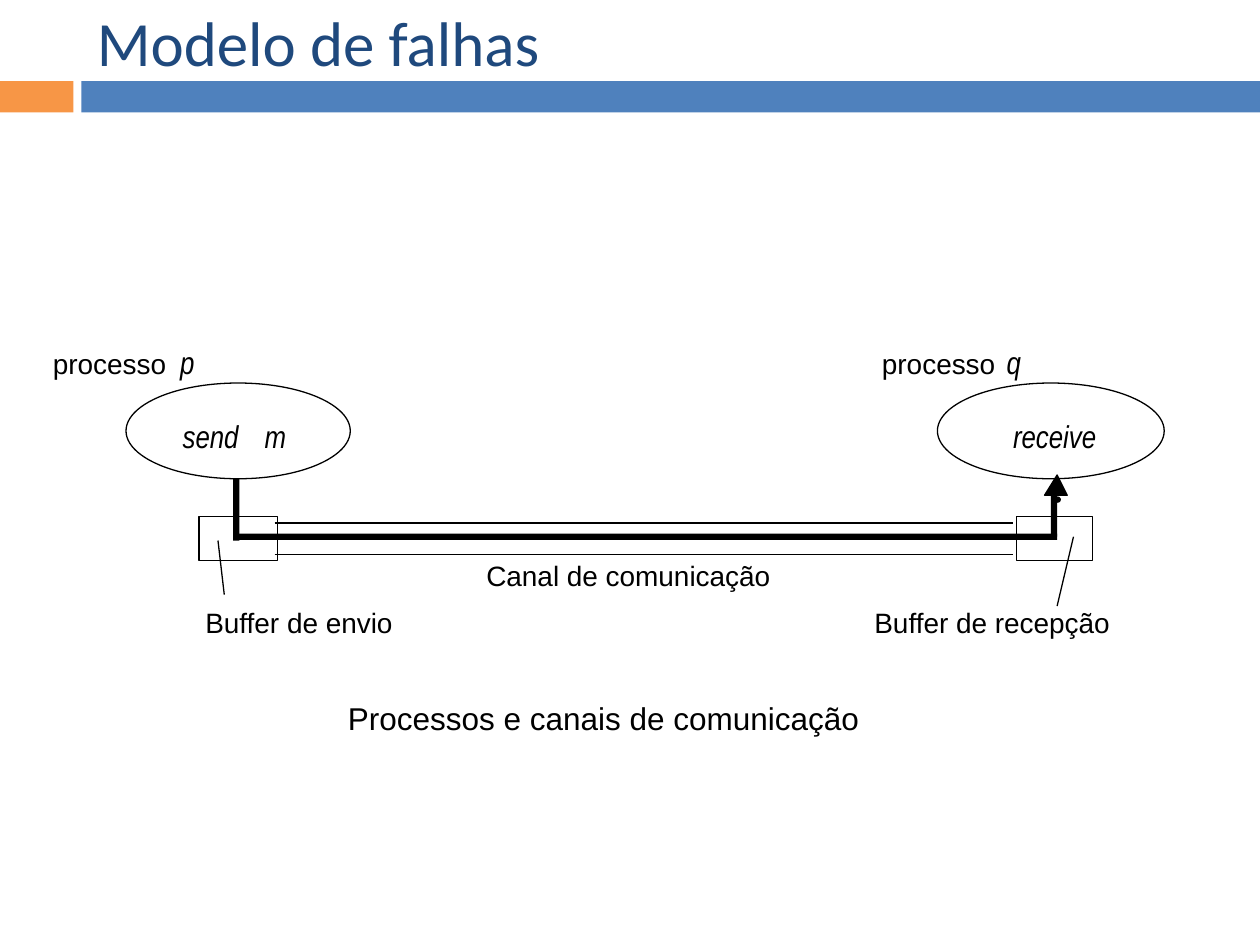
from lxml import etree
from pptx import Presentation
from pptx.dml.color import RGBColor
from pptx.enum.shapes import MSO_CONNECTOR, MSO_SHAPE
from pptx.enum.text import MSO_ANCHOR, MSO_AUTO_SIZE, PP_ALIGN
from pptx.oxml.ns import qn
from pptx.util import Pt

RECT, OVAL = MSO_SHAPE.RECTANGLE, MSO_SHAPE.OVAL
STRAIGHT = MSO_CONNECTOR.STRAIGHT
MIDDLE, CENTER, LEFT = MSO_ANCHOR.MIDDLE, PP_ALIGN.CENTER, PP_ALIGN.LEFT
GROW = MSO_AUTO_SIZE.SHAPE_TO_FIT_TEXT

BLACK, BLUE, ORANGE, NAVY = "000000", "4F81BD", "F79646", "1F497D"
THIN = 0.75

# Lengths are in points: left, top, width, height
TITLE = ("Modelo de falhas", (48.24, 4.32, 642.24, 38.16))
CAPTION = ("Processos e canais de comunicação", (113.76, 396, 462.24, 28.8))
BANDS = [((0, 46.3, 42, 18), ORANGE), ((46.5, 46.3, 673.5, 18), BLUE)]

# text, left, top, width
LABELS = [
    ("processo", 30.24, 198, 69.12),
    ("processo", 504, 198, 69.12),
    ("Canal de comunicação", 277.92, 318.96, 162.72),
    ("Buffer de envio", 117.36, 346.32, 107.28),
    ("Buffer de recepção", 499.68, 346.32, 134.64),
]
SYMBOLS = [
    ("p", 102.96, 195.84, 11.52),
    ("q", 575.28, 195.84, 11.52),
    ("send", 104.4, 238.32, 43.2),
    ("m", 151.2, 238.32, 17.28),
    ("receive", 578.88, 238.32, 66.24),
]

OUTLINES = [
    (RECT, (113.76, 295.2, 44.64, 25.2)),
    (RECT, (581.04, 295.2, 43.2, 25.2)),
    (OVAL, (72, 218.88, 128.16, 54.72)),
    (OVAL, (535.68, 218.88, 129.6, 54.72)),
]
CHANNEL_WALLS = [(156.96, y, 578.88, y) for y in (298.8, 316.8)]
BUFFER_POINTERS = [(128.16, 339.84, 124.56, 308.88),
                   (604.08, 346.32, 613.44, 306.72)]

MESSAGE_PATH = [
    (RECT, (133.2, 273.6, 3.6, 35.28)),
    (RECT, (135.36, 304.92, 468.72, 3.6)),
    (RECT, (600.48, 281.52, 3.6, 25.2)),
    (OVAL, (602.64, 283.68, 3.6, 3.6)),
]
ARROWHEAD = [(596.88, 283), (604.08, 271.44), (609.84, 283)]


def color(value):
    return RGBColor.from_string(value)


def style(shape, fill=None, line=None):
    shape.shadow.inherit = False
    if fill:
        shape.fill.solid()
        shape.fill.fore_color.rgb = color(fill)
    else:
        shape.fill.background()
    if line:
        shape.line.color.rgb = color(line)
        shape.line.width = Pt(THIN)
    else:
        shape.line.fill.background()


def add_figure(page, kind, area, fill=None, line=None):
    style(page.shapes.add_shape(kind, *map(Pt, area)), fill, line)


def add_line(page, ends):
    line = page.shapes.add_connector(STRAIGHT, *map(Pt, ends))
    line.line.color.rgb = color(BLACK)
    line.line.width = Pt(THIN)
    properties = line._element.find(qn("p:spPr"))
    etree.SubElement(properties, qn("a:effectLst"))


def add_text(page, text, area, size, font, ink=BLACK, align=LEFT):
    box = page.shapes.add_textbox(*map(Pt, area))
    frame = box.text_frame
    frame.word_wrap = True
    frame.text = text
    para = frame.paragraphs[0]
    para.alignment = align
    span = para.runs[0]
    span.font.size = Pt(size)
    span.font.name = font
    span.font.color.rgb = color(ink)
    return frame


def add_label(page, text, area, size, font, italic=False):
    """Add a one-line text without margins that keeps to its own width."""
    frame = add_text(page, text, area, size, font)
    frame.word_wrap = False
    frame.auto_size = GROW
    frame.margin_left = frame.margin_right = 0
    frame.margin_top = frame.margin_bottom = 0
    frame.paragraphs[0].runs[0].font.italic = italic


def main():
    deck = Presentation()
    deck.slide_width, deck.slide_height = Pt(720), Pt(540)
    page = deck.slides.add_slide(deck.slide_layouts[6])

    for area, fill in BANDS:
        add_figure(page, RECT, area, fill=fill)
    title = add_text(page, *TITLE, 36, "Calibri", NAVY)
    title.vertical_anchor = MIDDLE

    for text, left, top, width in LABELS:
        add_label(page, text, (left, top, width, 19.44), 16, "Arial")
    for ends in CHANNEL_WALLS + BUFFER_POINTERS:
        add_line(page, ends)
    for kind, area in OUTLINES:
        add_figure(page, kind, area, line=BLACK)
    for text, left, top, width in SYMBOLS:
        add_label(page, text, (left, top, width, 21.6), 18, "Arial Narrow", True)

    for kind, area in MESSAGE_PATH:
        add_figure(page, kind, area, fill=BLACK)
    start, *others = [(Pt(x), Pt(y)) for x, y in ARROWHEAD]
    builder = page.shapes.build_freeform(*start)
    builder.add_line_segments(others, close=True)
    style(builder.convert_to_shape(), BLACK, BLACK)

    caption = add_text(page, *CAPTION, 18, "Arial", align=CENTER)
    caption.auto_size = GROW
    deck.save("out.pptx")


if __name__ == "__main__":
    main()
